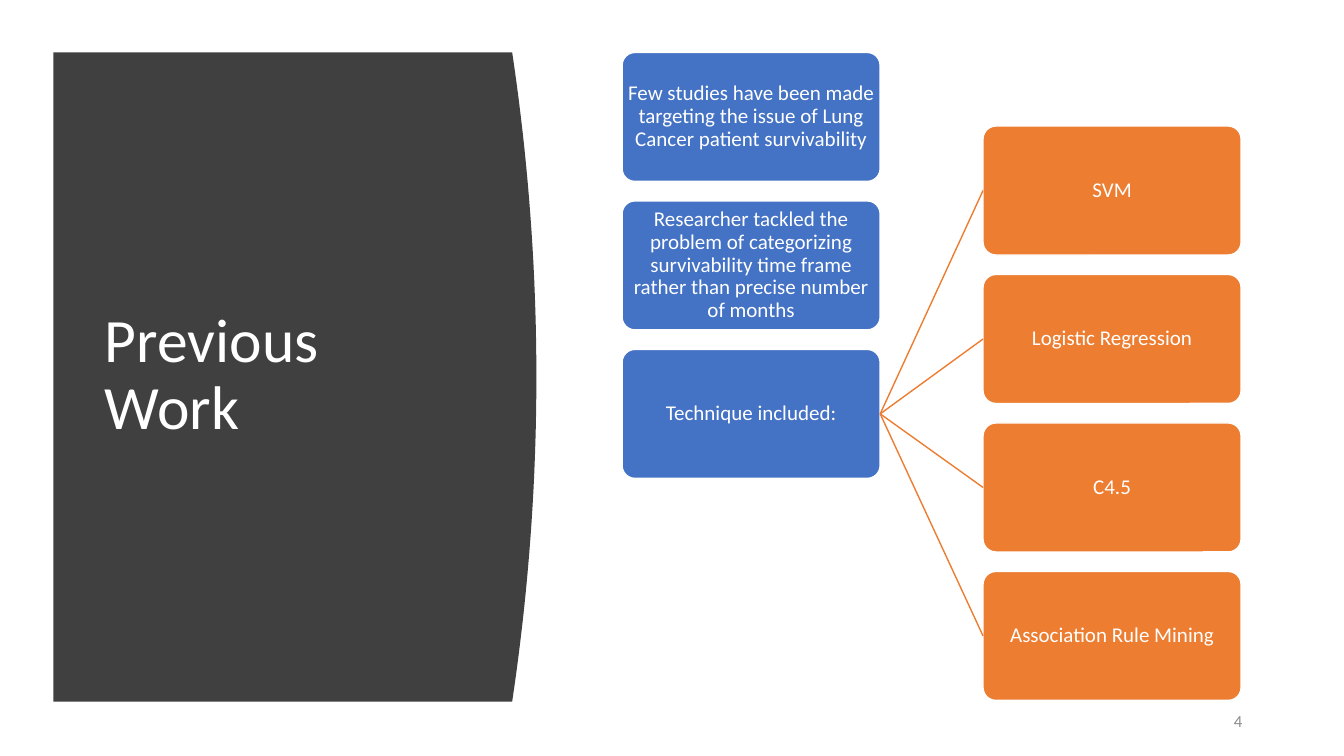
import pptx
import pptx.util
import pptx.dml.color
import pptx.enum.shapes
import pptx.enum.text
import pptx.oxml.ns
import lxml.etree

Inches, Pt = pptx.util.Inches, pptx.util.Pt
ALIGN = pptx.enum.text.PP_ALIGN

TITLE = "Previous Work"
NUMBER = "4"
POINTS = [
    "Few studies have been made targeting the issue of Lung Cancer patient survivability",
    "Researcher tackled the problem of categorizing survivability time frame "
    "rather than precise number of months",
    "Technique included:",
]
METHODS = ["SVM", "Logistic Regression", "C4.5", "Association Rule Mining"]

COLORS = {"panel": "404040", "point": "4472C4", "method": "ED7D31",
          "white": "FFFFFF", "number": "8C8C8C"}
FONT = "Calibri"

BOX_W, BOX_H, STEP = 2.56, 1.28, 1.473
POINT_X, POINT_Y = 6.17, 0.52
METHOD_X, METHOD_Y = 9.75, 1.25
PANEL = {"left": 0.53, "top": 0.52, "edge": 5.08, "bulge": 0.24, "height": 6.44}
CURVE_STEPS = 40


def color(name):
    return pptx.dml.color.RGBColor.from_string(COLORS[name])


def write(shape, text, size, tint, align, inset=(0.1, 0.05), spacing=None):
    frame = shape.text_frame
    frame.word_wrap = True
    frame.auto_size = pptx.enum.text.MSO_AUTO_SIZE.NONE
    frame.vertical_anchor = pptx.enum.text.MSO_ANCHOR.MIDDLE
    frame.margin_left = frame.margin_right = Inches(inset[0])
    frame.margin_top = frame.margin_bottom = Inches(inset[1])
    para = frame.paragraphs[0]
    para.alignment = align
    if spacing:
        para.line_spacing = spacing
    run = para.add_run()
    run.text = text
    run.font.name, run.font.size = FONT, Pt(size)
    run.font.color.rgb = color(tint)


def add_panel(slide):
    """Draw the dark panel, whose right edge is a shallow parabola."""
    left, top, edge = PANEL["left"], PANEL["top"], PANEL["edge"]
    curve = []
    for i in range(CURVE_STEPS + 1):
        t = i / CURVE_STEPS
        x = edge + PANEL["bulge"] * (1 - (2 * t - 1) ** 2)
        curve.append((Inches(x), Inches(top + t * PANEL["height"])))
    form = slide.shapes.build_freeform(Inches(left), Inches(top))
    form.add_line_segments(curve + [(Inches(left), Inches(top + PANEL["height"]))])
    panel = form.convert_to_shape()
    panel.shadow.inherit = False
    panel.fill.solid()
    panel.fill.fore_color.rgb = color("panel")
    panel.line.fill.background()


def add_box(slide, text, x, y, tint):
    box = slide.shapes.add_shape(
        pptx.enum.shapes.MSO_SHAPE.ROUNDED_RECTANGLE,
        Inches(x), Inches(y), Inches(BOX_W), Inches(BOX_H))
    box.adjustments[0] = 0.1
    box.shadow.inherit = False
    box.fill.solid()
    box.fill.fore_color.rgb = color(tint)
    box.line.color.rgb = color("white")
    box.line.width = Pt(1)
    write(box, text, 15, "white", ALIGN.CENTER, (0.01, 0.01), 0.9)
    return box


def join(slide, start, end):
    line = slide.shapes.add_connector(
        pptx.enum.shapes.MSO_CONNECTOR.STRAIGHT, 0, 0, 0, 0)
    line.begin_connect(start, 3)
    line.end_connect(end, 1)
    line.line.color.rgb = color("method")
    line.line.width = Pt(1)
    lxml.etree.SubElement(line._element.spPr, pptx.oxml.ns.qn("a:effectLst"))


def main():
    deck = pptx.Presentation()
    deck.slide_width, deck.slide_height = Inches(13.33), Inches(7.5)
    slide = deck.slides.add_slide(deck.slide_layouts[5])

    add_panel(slide)
    title = slide.shapes.title
    title.left, title.top = Inches(0.94), Inches(1.11)
    title.width, title.height = Inches(3.74), Inches(5.24)
    write(title, TITLE, 44, "white", ALIGN.LEFT, spacing=0.9)
    # Bring the title in front of the panel
    slide.shapes._spTree.append(title._element)

    number = slide.shapes.add_textbox(
        Inches(11.73), Inches(6.95), Inches(0.69), Inches(0.4))
    write(number, NUMBER, 12, "number", ALIGN.RIGHT)

    points = [add_box(slide, text, POINT_X, POINT_Y + i * STEP, "point")
              for i, text in enumerate(POINTS)]
    for i, text in enumerate(METHODS):
        method = add_box(slide, text, METHOD_X, METHOD_Y + i * STEP, "method")
        join(slide, points[-1], method)

    deck.save("out.pptx")


if __name__ == "__main__":
    main()
